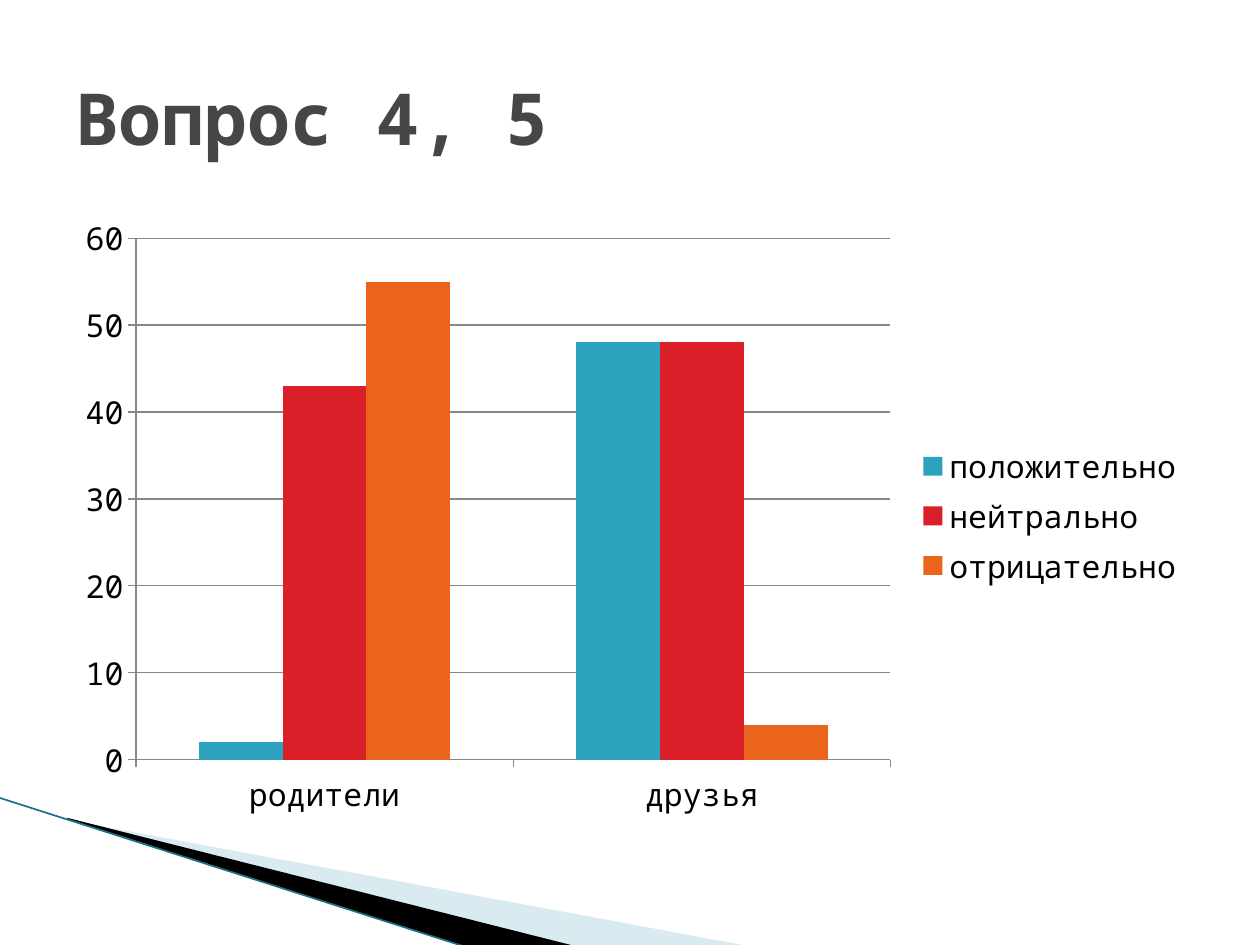
from lxml import etree
from pptx import Presentation
from pptx.chart.data import CategoryChartData
from pptx.dml.color import RGBColor
from pptx.enum.chart import XL_CHART_TYPE, XL_LEGEND_POSITION, XL_TICK_MARK
from pptx.enum.shapes import MSO_CONNECTOR
from pptx.enum.text import MSO_ANCHOR
from pptx.oxml.ns import qn
from pptx.util import Inches, Pt

CLUSTERED = XL_CHART_TYPE.COLUMN_CLUSTERED
RIGHT = XL_LEGEND_POSITION.RIGHT
OUTSIDE = XL_TICK_MARK.OUTSIDE
STRAIGHT = MSO_CONNECTOR.STRAIGHT
MIDDLE = MSO_ANCHOR.MIDDLE

BLACK = RGBColor(0x00, 0x00, 0x00)
TITLE_GREY = RGBColor(0x46, 0x46, 0x46)
GRID_GREY = RGBColor(0x87, 0x87, 0x87)
PALE_BLUE = RGBColor(0xA0, 0xCB, 0xDC)
EDGE_TEAL = RGBColor(0x1B, 0x70, 0x85)
TEAL = RGBColor(0x2D, 0xA2, 0xBF)
RED = RGBColor(0xDA, 0x1F, 0x28)
ORANGE = RGBColor(0xEB, 0x64, 0x1B)
FONT = "Noto Sans Mono"

deck = Presentation()
deck.slide_width, deck.slide_height = Inches(10), Inches(7.5)
page = deck.slides.add_slide(deck.slide_layouts[6])
margin = deck.slide_width * 0.05
content_width = deck.slide_width - 2 * margin

# Corner wedges: points in hundredths of an inch, fill, opacity in percent
wedges = [
    ([(55, 651), (595, 751), (456, 751), (55, 650)], PALE_BLUE, 40),
    ([(53, 649), (457, 751), (372, 752), (54, 650)], BLACK, 100),
]
for points, color, opacity in wedges:
    builder = page.shapes.build_freeform(*points[0], scale=Inches(0.01))
    builder.add_line_segments(points[1:], close=True)
    wedge = builder.convert_to_shape()
    wedge.shadow.inherit = False
    wedge.fill.solid()
    wedge.fill.fore_color.rgb = color
    wedge.line.fill.background()
    if opacity < 100:
        fill_color = wedge.element.spPr.find(".//" + qn("a:srgbClr"))
        etree.SubElement(fill_color, qn("a:alpha"), val=str(opacity * 1000))

edge = page.shapes.add_connector(
    STRAIGHT, Inches(-0.01), Inches(6.33), Inches(3.71), Inches(7.52))
edge.line.color.rgb = EDGE_TEAL
edge.line.width = Pt(0.95)
etree.SubElement(edge.element.spPr, qn("a:effectLst"))

# Answers chart
answers = [
    ("положительно", (2, 48), TEAL),
    ("нейтрально", (43, 48), RED),
    ("отрицательно", (55, 4), ORANGE),
]
data = CategoryChartData()
data.categories = ["родители", "друзья"]
for name, values, _ in answers:
    data.add_series(name, values)
chart = page.shapes.add_chart(
    CLUSTERED, int(margin), int(deck.slide_height * 0.216),
    int(content_width), int(deck.slide_height * 0.66), data).chart
chart.has_title = False
chart.font.name = FONT
chart.font.size = Pt(18)
chart.font.color.rgb = BLACK
chart.has_legend = True
chart.legend.position = RIGHT
chart.legend.include_in_layout = False

plot = chart.plots[0]
plot.gap_width, plot.overlap, plot.vary_by_categories = 150, 0, False
for series, (_, _, color) in zip(plot.series, answers):
    series.format.fill.solid()
    series.format.fill.fore_color.rgb = color

value_axis = chart.value_axis
value_axis.minimum_scale, value_axis.maximum_scale, value_axis.major_unit = 0, 60, 10
value_axis.has_major_gridlines = True
for axis in (chart.category_axis, value_axis):
    axis.major_tick_mark = OUTSIDE
for lined in (chart.category_axis, value_axis, value_axis.major_gridlines):
    lined.format.line.color.rgb = GRID_GREY
    lined.format.line.width = Pt(0.75)

# Title
box = page.shapes.add_textbox(
    int(margin), int(deck.slide_height * 0.04),
    int(content_width), int(deck.slide_height / 6))
box.text_frame.word_wrap = True
box.text_frame.vertical_anchor = MIDDLE
span = box.text_frame.paragraphs[0].add_run()
span.text = "Вопрос 4, 5"
for key, value in {"name": FONT, "size": Pt(41), "bold": True}.items():
    setattr(span.font, key, value)
span.font.color.rgb = TITLE_GREY

deck.save("out.pptx")
